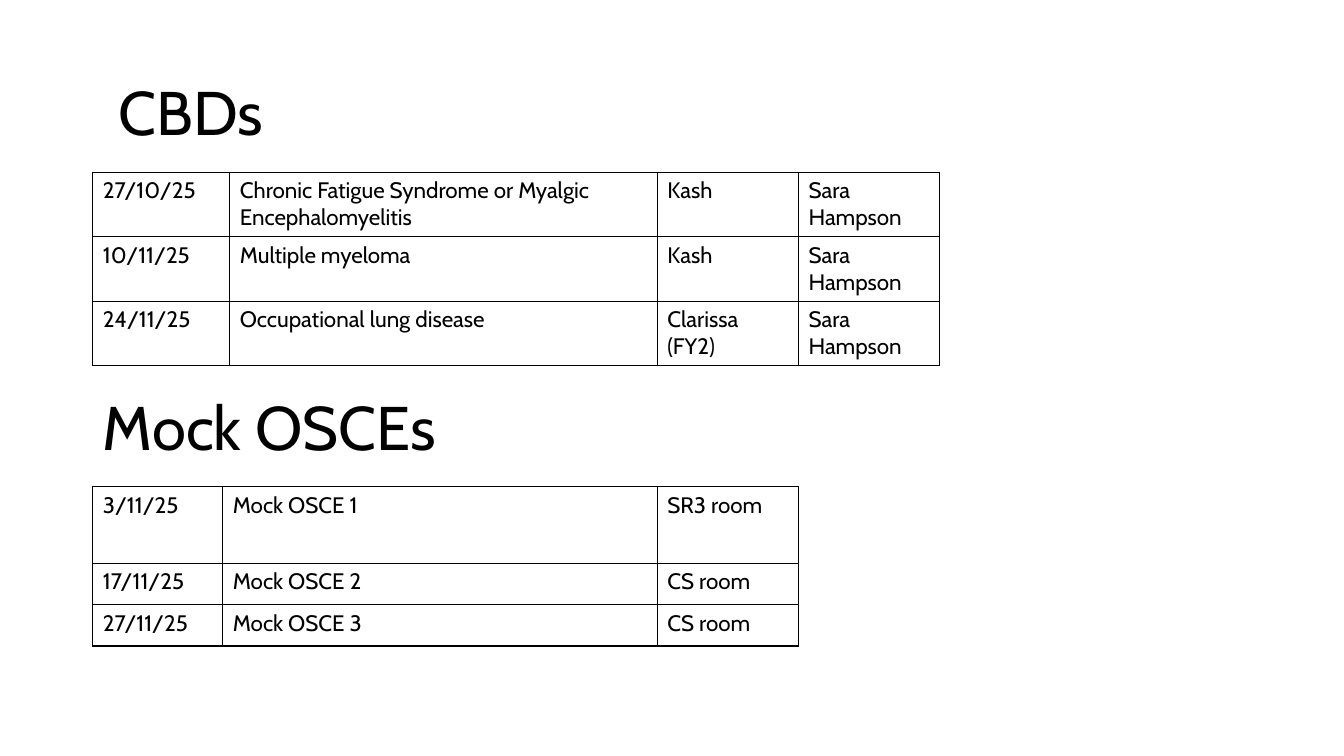
"""Build a slide with the timetables of CBDs and mock OSCEs."""
from lxml.etree import SubElement as Sub
from pptx import Presentation
from pptx.dml.color import RGBColor
from pptx.enum.text import MSO_ANCHOR as Anchor, MSO_AUTO_SIZE as Auto, PP_ALIGN as Align
from pptx.oxml.ns import qn
from pptx.util import Inches, Pt

CBDS = [
    ("27/10/25", "Chronic Fatigue Syndrome or Myalgic Encephalomyelitis", "Kash", "Sara Hampson"),
    ("10/11/25", "Multiple myeloma", "Kash", "Sara Hampson"),
    ("24/11/25", "Occupational lung disease", "Clarissa (FY2)", "Sara Hampson"),
]
OSCES = [
    ("3/11/25", "Mock OSCE 1", "SR3 room"),
    ("17/11/25", "Mock OSCE 2", "CS room"),
    ("27/11/25", "Mock OSCE 3", "CS room"),
]
BLACK = RGBColor(0, 0, 0)
FONT = "Cabin"
LEFT = 0.92
HEAD = (11.5, 1.45)


def write(frame, text, size=16, space=None, anchor=Anchor.TOP):
    """Put formatted text into a frame."""
    frame.word_wrap = True
    frame.vertical_anchor = anchor
    para = frame.paragraphs[0]
    para.alignment = Align.LEFT
    para.line_spacing = space
    run = para.add_run()
    run.text = text
    run.font.size = Pt(size)
    run.font.name = FONT
    run.font.color.rgb = BLACK


def head(shape, text, left, top):
    """Place a heading."""
    shape.left, shape.top = Inches(left), Inches(top)
    shape.width, shape.height = map(Inches, HEAD)
    shape.text_frame.auto_size = Auto.NONE
    write(shape.text_frame, text, size=44, space=0.9, anchor=Anchor.MIDDLE)


def border(cell):
    """Draw a thin black line on each side of a cell."""
    props = cell._tc.get_or_add_tcPr()
    for side in ("lnL", "lnR", "lnT", "lnB"):
        line = Sub(props, qn(f"a:{side}"), w=str(Pt(1)))
        fill = Sub(line, qn("a:solidFill"))
        Sub(fill, qn("a:srgbClr"), val=str(BLACK))


def grid(slide, data, top, cols, rows):
    """Add a plain table with black rules."""
    frame = slide.shapes.add_table(
        len(rows), len(cols), Inches(LEFT), Inches(top), Inches(sum(cols)), Inches(sum(rows)))
    table = frame.table
    table.first_row = table.horz_banding = False
    for col, width in zip(table.columns, cols):
        col.width = Inches(width)
    for row, height, texts in zip(table.rows, rows, data):
        row.height = Inches(height)
        for cell, text in zip(row.cells, texts):
            border(cell)
            cell.fill.background()
            write(cell.text_frame, text)


def main():
    """Make and save the slide."""
    deck = Presentation()
    deck.slide_width, deck.slide_height = Inches(13.33), Inches(7.5)
    slide = deck.slides.add_slide(deck.slide_layouts[5])
    head(slide.shapes.title, "Mock OSCEs", LEFT, 3.55)
    grid(slide, CBDS, 1.71, (1.36, 4.24, 1.4, 1.4), (0.64,) * 3)
    head(slide.shapes.add_textbox(0, 0, 0, 0), "CBDs", 1.08, 0.42)
    grid(slide, OSCES, 4.83, (1.29, 4.31, 1.4), (0.76, 0.41, 0.41))
    deck.save("out.pptx")


if __name__ == "__main__":
    main()
